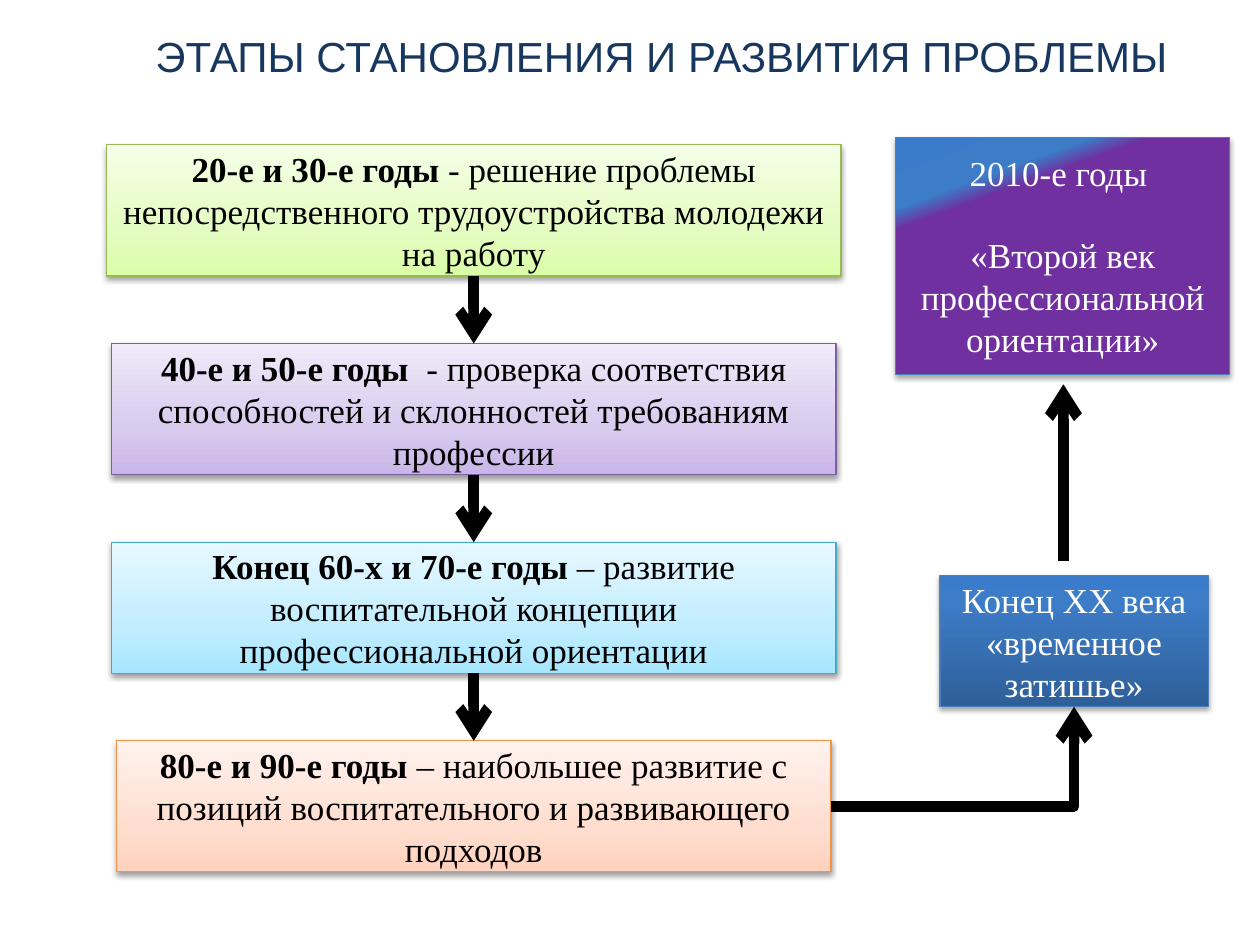
from dataclasses import dataclass

import lxml.etree
import pptx
import pptx.dml.color
import pptx.enum.shapes
import pptx.enum.text
import pptx.oxml.ns
import pptx.util

Inches = pptx.util.Inches
Pt = pptx.util.Pt
qn = pptx.oxml.ns.qn
RGB = pptx.dml.color.RGBColor.from_string
CONNECTOR = pptx.enum.shapes.MSO_CONNECTOR
BOTTOM, RIGHT, TOP = 2, 3, 0


@dataclass(frozen=True)
class Theme:
    title_font: str = "Arial"
    body_font: str = "Times New Roman"
    title_size: int = 24
    body_size: int = 20
    title: str = "17375E"
    dark: str = "000000"
    light: str = "FFFFFF"
    blue_line: str = "4B7EBC"
    box_line_width: float = 0.75
    arrow_width: float = 6
    blue_end: tuple = ((80, "3D7CC7"), (100, "3A7CCB"))


THEME = Theme()


@dataclass(frozen=True)
class Box:
    left: float
    top: float
    width: float
    height: float
    stops: tuple
    line: str
    text_color: str
    paragraphs: tuple  # each paragraph is a tuple of (text, bold) runs
    angle: int = 270
    shadow_alpha: int = 38
    shadow_distance: float = 1.6
    paragraph_gap: float = 0


@dataclass(frozen=True)
class Stage:
    width: float
    colors: tuple
    line: str
    years: str
    summary: str


# Left column, top to bottom
STAGES = (
    Stage(5.83, ("DAFDA7", "E4FCC2", "F5FFE7"), "98B955", "20-е и 30-е годы ",
          "- решение проблемы непосредственного трудоустройства молодежи на работу"),
    Stage(5.75, ("C9B5E8", "D8CBEE", "F0EAF9"), "7D60A0", "40-е и 50-е годы  ",
          "- проверка соответствия способностей и склонностей требованиям профессии"),
    Stage(5.75, ("A7E6FF", "C1EDFF", "E7F8FF"), "46AAC5", "Конец 60-х и 70-е годы ",
          "– развитие воспитательной концепции профессиональной ориентации"),
    Stage(5.67, ("FFD2BD", "FFDED0", "FFF2ED"), "F69240", "80-е и 90-е годы ",
          "– наибольшее развитие с позиций воспитательного и развивающего подходов"),
)
STAGE_CENTER, FIRST_TOP, LAST_TOP, BOX_HEIGHT = 3.76, 1.15, 5.88, 1.04
STAGE_PITCH = (LAST_TOP - FIRST_TOP) / (len(STAGES) - 1)

# Right column
LULL = Box(7.46, 4.57, 2.13, BOX_HEIGHT, ((0, "2F5F99"),) + THEME.blue_end,
           THEME.blue_line, THEME.light,
           ((("Конец XX века", False),), (("«временное затишье»", False),)),
           shadow_alpha=35, shadow_distance=1.8)
SECOND_CENTURY = Box(7.11, 1.09, 2.65, 1.88, ((74, "7030A0"),) + THEME.blue_end,
                     THEME.blue_line, THEME.light,
                     ((("2010-е годы ", False),),
                      (("«Второй век профессиональной ориентации»", False),)),
                     angle=250, shadow_alpha=35, shadow_distance=1.8, paragraph_gap=23)


def add_color(parent, color: str):
    return lxml.etree.SubElement(parent, qn("a:srgbClr"), val=color)


def set_gradient(shape, stops: tuple, angle: int) -> None:
    shape.fill.gradient()
    gradient = shape._element.spPr.find(qn("a:gradFill"))
    stop_list = gradient.find(qn("a:gsLst"))
    for default_stop in list(stop_list):
        stop_list.remove(default_stop)
    for position, color in stops:
        add_color(lxml.etree.SubElement(stop_list, qn("a:gs"), pos=str(position * 1000)), color)
    gradient.find(qn("a:lin")).set("ang", str(angle * 60000))


def set_shadow(shape, alpha: int, distance: float) -> None:
    shape.shadow.inherit = False
    effects = shape._element.spPr.find(qn("a:effectLst"))
    shadow = lxml.etree.SubElement(
        effects, qn("a:outerShdw"), blurRad=str(int(Pt(3.1))),
        dist=str(int(Pt(distance))), dir="5400000", rotWithShape="0")
    lxml.etree.SubElement(add_color(shadow, THEME.dark), qn("a:alpha"), val=str(alpha * 1000))


def add_run(paragraph, text: str, font: str, size: float, color: str, bold: bool = False) -> None:
    run = paragraph.add_run()
    run.text = text
    run.font.name = font
    run.font.size = Pt(size)
    run.font.bold = bold
    run.font.color.rgb = RGB(color)


def add_box(slide, box: Box):
    shape = slide.shapes.add_shape(
        pptx.enum.shapes.MSO_SHAPE.RECTANGLE,
        Inches(box.left), Inches(box.top), Inches(box.width), Inches(box.height))
    set_gradient(shape, box.stops, box.angle)
    shape.line.color.rgb = RGB(box.line)
    shape.line.width = Pt(THEME.box_line_width)
    set_shadow(shape, box.shadow_alpha, box.shadow_distance)
    frame = shape.text_frame
    frame.word_wrap = True
    frame.vertical_anchor = pptx.enum.text.MSO_ANCHOR.MIDDLE
    for number, runs in enumerate(box.paragraphs):
        paragraph = frame.add_paragraph() if number else frame.paragraphs[0]
        paragraph.alignment = pptx.enum.text.PP_ALIGN.CENTER
        if number:
            paragraph.space_before = Pt(box.paragraph_gap)
        for text, bold in runs:
            add_run(paragraph, text, THEME.body_font, THEME.body_size, box.text_color, bold)
    return shape


def add_arrow(slide, kind, start: tuple = (0, 0), end: tuple = (0, 0)):
    arrow = slide.shapes.add_connector(kind, *map(Inches, start + end))
    arrow.line.color.rgb = RGB(THEME.dark)
    arrow.line.width = Pt(THEME.arrow_width)
    properties = arrow._element.spPr
    lxml.etree.SubElement(properties.find(qn("a:ln")), qn("a:tailEnd"), type="arrow")
    lxml.etree.SubElement(properties, qn("a:effectLst"))
    return arrow


def join(arrow, source, source_side: int, target, target_side: int) -> None:
    arrow.begin_connect(source, source_side)
    arrow.end_connect(target, target_side)


def stage_box(number: int, stage: Stage) -> Box:
    return Box(STAGE_CENTER - stage.width / 2, FIRST_TOP + number * STAGE_PITCH,
               stage.width, BOX_HEIGHT, tuple(zip((0, 35, 100), stage.colors)),
               stage.line, THEME.dark, (((stage.years, True), (stage.summary, False)),))


def main() -> None:
    deck = pptx.Presentation()
    deck.slide_width, deck.slide_height = Inches(10), Inches(7.5)
    slide = deck.slides.add_slide(deck.slide_layouts[5])

    # Title
    title = slide.shapes.title
    title.left, title.top, title.width, title.height = map(Inches, (0.5, 0, 9.5, 0.88))
    title.text_frame.vertical_anchor = pptx.enum.text.MSO_ANCHOR.MIDDLE
    heading = title.text_frame.paragraphs[0]
    heading.alignment = pptx.enum.text.PP_ALIGN.CENTER
    add_run(heading, "ЭТАПЫ СТАНОВЛЕНИЯ И РАЗВИТИЯ ПРОБЛЕМЫ",
            THEME.title_font, THEME.title_size, THEME.title)

    # Boxes
    lull = add_box(slide, LULL)
    stages = [add_box(slide, stage_box(number, stage)) for number, stage in enumerate(STAGES)]
    add_box(slide, SECOND_CENTURY)

    # Arrows
    for upper, lower in zip(stages, stages[1:]):
        join(add_arrow(slide, CONNECTOR.STRAIGHT), upper, BOTTOM, lower, TOP)
    turn = add_arrow(slide, CONNECTOR.ELBOW, (6.6, 6.4), (8.52, 5.61))
    turn._element.spPr.find(qn("a:prstGeom")).set("prst", "bentConnector2")
    join(turn, stages[-1], RIGHT, lull, BOTTOM)
    add_arrow(slide, CONNECTOR.STRAIGHT, (8.44, 4.45), (8.44, 3.05))

    deck.save("out.pptx")


if __name__ == "__main__":
    main()
